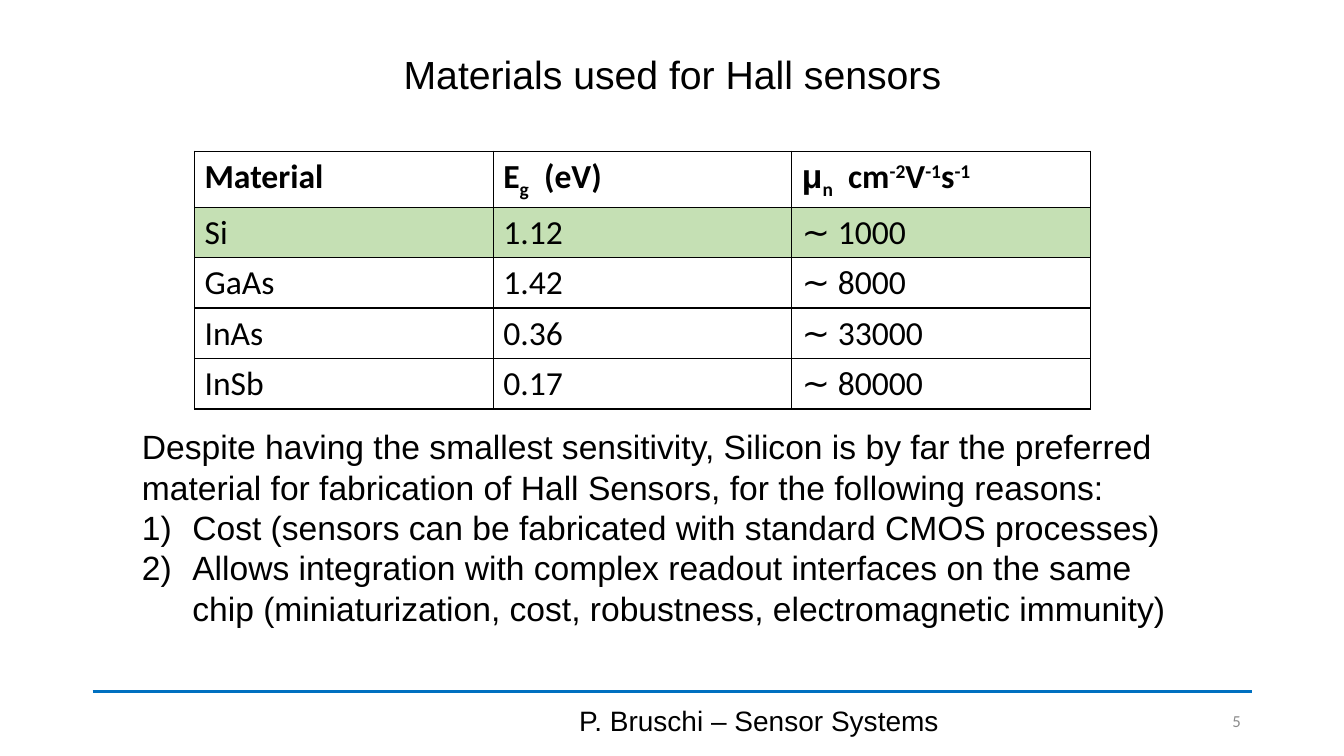
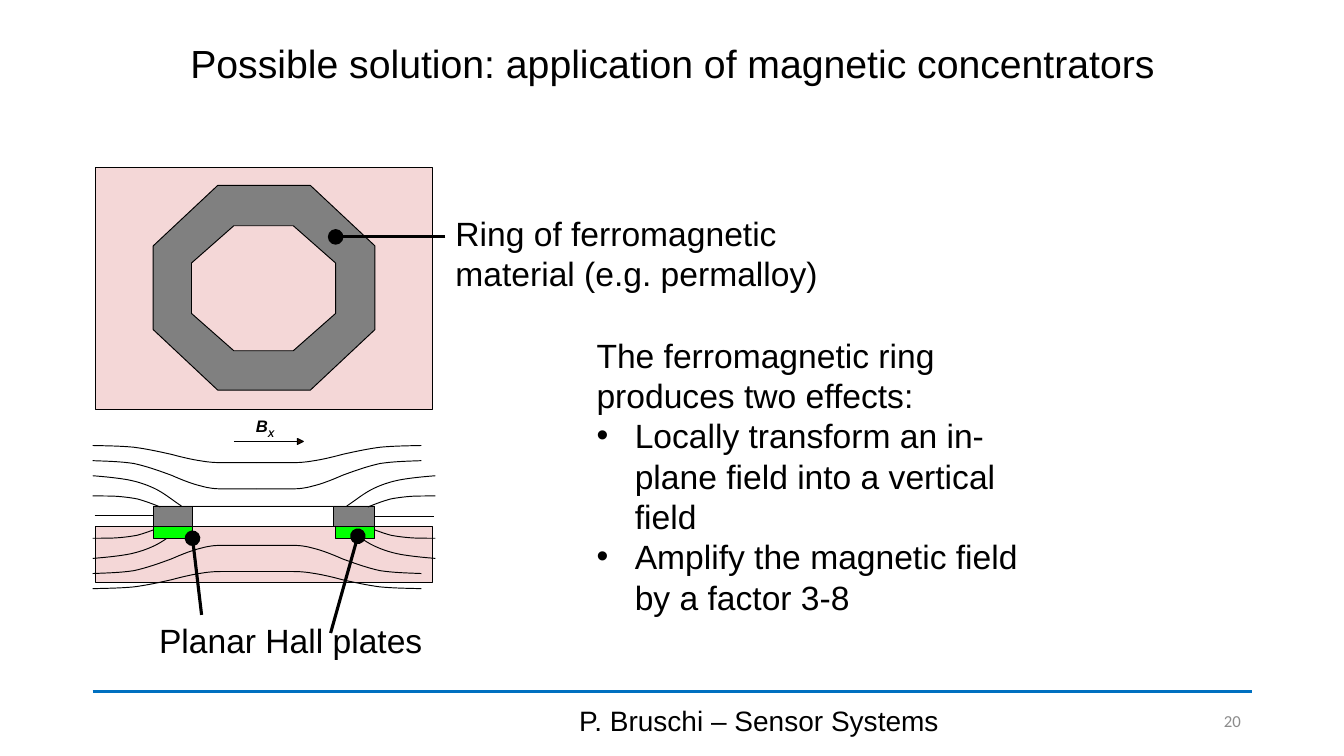
from pptx import Presentation
from pptx import util as u
from pptx.dml.color import RGBColor
from pptx.enum import shapes, text
from pptx.oxml import parse_xml
from pptx.oxml.ns import nsdecls, qn
from lxml import etree

COLUMNS, ROWS = 40 / 3, 7.5  # square grid, one inch per cell
COLORS = {
    "ink": "000000", "rule": "0070C0", "number": "8C8C8C", "paper": "FFFFFF",
    "highlight": "C5E0B4", "substrate": "F4D7D7", "ferromagnet": "808080",
    "plate": "00FF00", "arrowhead": "2B1100",
}
BODY = {"size": u.Pt(24), "name": "Arial"}
TITLE = {"size": u.Pt(28), "name": "Arial"}
FOOTER = {"size": u.Pt(20), "name": "Arial"}
NUMBER = {"size": u.Pt(12), "name": "Calibri"}
CELL = {"size": u.Pt(24), "name": "Calibri"}
FIELD_LABEL = {"size": u.Pt(11.9), "name": "Arial", "bold": True, "italic": True}
SUB, SUPER = -25000, 30000
OUTLINE, LEADER = 0.68, 2.25
CENTER, RIGHT = text.PP_ALIGN.CENTER, text.PP_ALIGN.RIGHT
MIDDLE = text.MSO_ANCHOR.MIDDLE

# Bezier control points as shares of the box that a field line fills
BEND = [(1, 1), (.93, 1), (.85, 1), (.8, 1), (.74, 1), (.71, .98), (.66, .9),
        (.61, .83), (.55, .7), (.48, .52), (.41, .37), (.33, .2), (.25, .1),
        (.17, .03), (.09, .02), (0, 0)]
DIVE = [(0, 0), (.13, .03), (.27, .07), (.39, .13), (.52, .2), (.64, .33),
        (.73, .47), (.83, .63), (.91, .83), (1, 1)]
GRAZE = [(0, 0), (.1, 0), (.19, 0), (.31, .02), (.41, .05), (.54, .13),
         (.66, .27), (.78, .47), (.88, .7), (1, 1)]
# profile, left, top, width, height, sum of x of a point and its mirror
FIELD_LINES = [
    (BEND, .92, 4.42, 1.63, .17, 5.1), (BEND, .92, 4.57, 1.63, .28, 5.1),
    (DIVE, .92, 4.72, .88, .3, 5.24), (GRAZE, .92, 4.92, .67, .11, 5.24),
]
FIELD_MIRROR_Y = 10.26


def cells(*counts):
    return [u.Inches(count) for count in counts]


def rgb(color):
    return RGBColor.from_string(COLORS[color])


def add_runs(paragraph, runs, style, color="ink"):
    """Add plain text, or a list of (text, baseline, differing formats)."""
    if isinstance(runs, str):
        runs = [(runs, 0, {})]
    for words, baseline, changes in runs:
        run = paragraph.add_run()
        run.text = words
        for attribute, value in {**style, **changes}.items():
            setattr(run.font, attribute, value)
        run.font.color.rgb = rgb(color)
        if baseline:
            run.font._element.set("baseline", str(baseline))


def add_marker(paragraph, indent, tag, **attributes):
    """Give a paragraph a hanging bullet or number."""
    properties = paragraph._p.get_or_add_pPr()
    properties.set("marL", str(u.Inches(indent)))
    properties.set("indent", str(-u.Inches(indent)))
    etree.SubElement(properties, qn("a:buFont"), typeface=BODY["name"])
    etree.SubElement(properties, qn("a:" + tag), attributes)


def add_text(slide, box, paragraphs, style, color="ink", align=None,
             anchor=text.MSO_ANCHOR.TOP, wrap=True, spacing=None):
    frame = slide.shapes.add_textbox(*cells(*box)).text_frame
    frame.word_wrap, frame.vertical_anchor = wrap, anchor
    for index, runs in enumerate(paragraphs):
        paragraph = frame.add_paragraph() if index else frame.paragraphs[0]
        paragraph.alignment, paragraph.line_spacing = align, spacing
        add_runs(paragraph, runs, style, color)
    return frame.paragraphs


def add_line(slide, start, end, width=OUTLINE, color="ink", tip=None):
    line = slide.shapes.add_connector(
        shapes.MSO_CONNECTOR.STRAIGHT, *cells(*start, *end))
    line.line.width, line.line.color.rgb = u.Pt(width), rgb(color)
    if tip:
        etree.SubElement(line.line._get_or_add_ln(), qn("a:tailEnd"),
                         type=tip, w="lg", len="lg")
    etree.SubElement(line._element.spPr, qn("a:effectLst"))


def paint(shape, color=None):
    shape.shadow.inherit = False
    if color:
        shape.fill.solid()
        shape.fill.fore_color.rgb = rgb(color)
    else:
        shape.fill.background()
    shape.line.width, shape.line.color.rgb = u.Pt(OUTLINE), rgb("ink")


def add_block(slide, box, color):
    paint(slide.shapes.add_shape(shapes.MSO_SHAPE.RECTANGLE, *cells(*box)), color)


def add_outline(slide, contours, color=None):
    """Draw closed contours when filled, open ones otherwise."""
    builder = None
    for contour in contours:
        first, *rest = [cells(*point) for point in contour]
        if builder:
            builder.move_to(*first)
        else:
            builder = slide.shapes.build_freeform(*first, scale=1.0)
        builder.add_line_segments(rest, close=color is not None)
    outline = builder.convert_to_shape()
    paint(outline, color)
    return outline


def octagon(left, top, right, bottom, cut_x, cut_y):
    return [(left + cut_x, top), (right - cut_x, top),
            (right, top + cut_y), (right, bottom - cut_y),
            (right - cut_x, bottom), (left + cut_x, bottom),
            (left, bottom - cut_y), (left, top + cut_y)]


def bend_segments(outline):
    """Turn every three straight segments into one cubic curve."""
    segments = list(outline._element.iter(qn("a:lnTo")))
    for start in range(0, len(segments), 3):
        curve = etree.Element(qn("a:cubicBezTo"))
        segments[start].addprevious(curve)
        for segment in segments[start:start + 3]:
            curve.append(segment[0])
            segment.getparent().remove(segment)


def add_field_lines(slide):
    for profile, left, top, width, height, mirror_x in FIELD_LINES:
        controls = [(left + width * x, top + height * y) for x, y in profile]
        for flip_x in (False, True):
            for flip_y in (False, True):
                bend_segments(add_outline(slide, [[
                    (mirror_x - x if flip_x else x,
                     FIELD_MIRROR_Y - y if flip_y else y) for x, y in controls]]))
    for start, end, level in ((.94, 1.52, 5.11), (3.72, 4.31, 5.12)):
        add_line(slide, (start, level), (end, level))


def add_borders(cell):
    properties = cell._tc.get_or_add_tcPr()
    for index, side in enumerate("LRTB"):
        properties.insert(index, parse_xml(
            f'<a:ln{side} {nsdecls("a")} w="{u.Pt(1)}"><a:solidFill>'
            f'<a:srgbClr val="{COLORS["ink"]}"/></a:solidFill></a:ln{side}>'))


def add_grid_table(slide, box, rows, highlighted):
    table = slide.shapes.add_table(len(rows), len(rows[0]), *cells(*box)).table
    table.horz_banding = False
    for row_index, row in enumerate(rows):
        for column_index, content in enumerate(row):
            cell = table.cell(row_index, column_index)
            if row_index == highlighted:
                cell.fill.solid()
                cell.fill.fore_color.rgb = rgb("highlight")
            else:
                cell.fill.background()
            add_borders(cell)
            add_runs(cell.text_frame.paragraphs[0], content,
                     {**CELL, "bold": row_index == 0})


def add_page(deck, title, title_top, number):
    """Start a slide with the title, rule and footer that all share."""
    slide = deck.slides.add_slide(deck.slide_layouts[6])
    add_line(slide, (.92, 6.86), (12.42, 6.86), 2.75, "rule")
    add_text(slide, (.92, title_top, 11.5, .72), [title], TITLE,
             align=CENTER, anchor=MIDDLE, spacing=.9)
    add_text(slide, (4.42, 6.95, 6.22, .4), ["P. Bruschi – Sensor Systems"],
             FOOTER, align=CENTER, anchor=MIDDLE)
    add_text(slide, (11.45, 6.95, .96, .4), [number], NUMBER, "number",
             align=RIGHT, anchor=MIDDLE)
    return slide


def add_materials(deck):
    slide = add_page(deck, "Materials used for Hall sensors", .4, "5")
    gap = [("E", 0, {}), ("g", SUB, {}), ("  (eV)", 0, {})]
    mobility = [("μ", 0, {"name": "Arial"}), ("n", SUB, {}), ("  cm", 0, {}),
                ("-2", SUPER, {}), ("V", 0, {}), ("-1", SUPER, {}),
                ("s", 0, {}), ("-1", SUPER, {})]
    add_grid_table(slide, (1.93, 1.5, 8.89, 2.05), [
        ("Material", gap, mobility),
        ("Si", "1.12", "∼ 1000"),
        ("GaAs", "1.42", "∼ 8000"),
        ("InAs", "0.36", "∼ 33000"),
        ("InSb", "0.17", "∼ 80000"),
    ], highlighted=1)
    _, *reasons = add_text(slide, (1.31, 4.18, 10.36, 2.12), [
        "Despite having the smallest sensitivity, Silicon is by far the preferred "
        "material for fabrication of Hall Sensors, for the following reasons:",
        "Cost (sensors can be fabricated with standard CMOS processes)",
        "Allows integration with complex readout interfaces on the same chip "
        "(miniaturization, cost, robustness, electromagnetic immunity)",
    ], BODY)
    for reason in reasons:
        add_marker(reason, .5, "buAutoNum", type="arabicParenR")


def add_concentrator(slide):
    """Draw the ring from above and, below it, its section in the field."""
    add_block(slide, (.95, 5.22, 3.34, .56), "substrate")
    add_block(slide, (1.52, 5.02, 2.2, .2), "ferromagnet")
    add_block(slide, (1.91, 5.02, 1.4, .2), "paper")
    add_block(slide, (.95, 1.66, 3.34, 2.4), "substrate")
    rim = octagon(1.52, 1.84, 3.72, 3.87, .64, .6)
    hole = octagon(1.9, 2.24, 3.33, 3.48, .42, .37)
    add_outline(slide, [rim, hole[::-1]], "ferromagnet")
    add_field_lines(slide)
    for plate_left in (1.52, 3.33):
        add_block(slide, (plate_left, 5.22, .39, .12), "plate")
    add_line(slide, (2.32, 4.38), (2.97, 4.38), 1.41)
    add_outline(slide, [[(2.95, 4.41), (2.95, 4.35), (3.01, 4.38)]], "arrowhead")
    add_text(slide, (2.44, 4.08, .4, .3), [[("B", 0, {}), ("X", SUB, {})]],
             FIELD_LABEL, wrap=False)


def add_solution(deck):
    slide = add_page(
        deck, "Possible solution: application of magnetic concentrators", .29, "20")
    add_concentrator(slide)
    add_text(slide, (4.42, 2.06, 3.83, .91),
             ["Ring of ferromagnetic", "material (e.g. permalloy)"], BODY, wrap=False)
    add_text(slide, (1.48, 6.1, 2.84, .5), ["Planar Hall plates"], BODY, wrap=False)
    for label_end, part_end in (((4.42, 2.35), (3.33, 2.35)),
                                ((2, 6.1), (1.91, 5.34)),
                                ((3.28, 6.28), (3.55, 5.32))):
        add_line(slide, label_end, part_end, LEADER, tip="oval")
    _, *effects = add_text(slide, (5.82, 3.27, 4.4, 2.93), [
        "The ferromagnetic ring produces two effects:",
        "Locally transform an in-plane field into a vertical field",
        "Amplify the magnetic field by a factor 3-8",
    ], BODY)
    for effect in effects:
        add_marker(effect, .38, "buChar", char="•")


def main():
    deck = Presentation()
    deck.slide_width, deck.slide_height = cells(COLUMNS, ROWS)
    add_materials(deck)
    add_solution(deck)
    deck.save("out.pptx")


if __name__ == "__main__":
    main()
